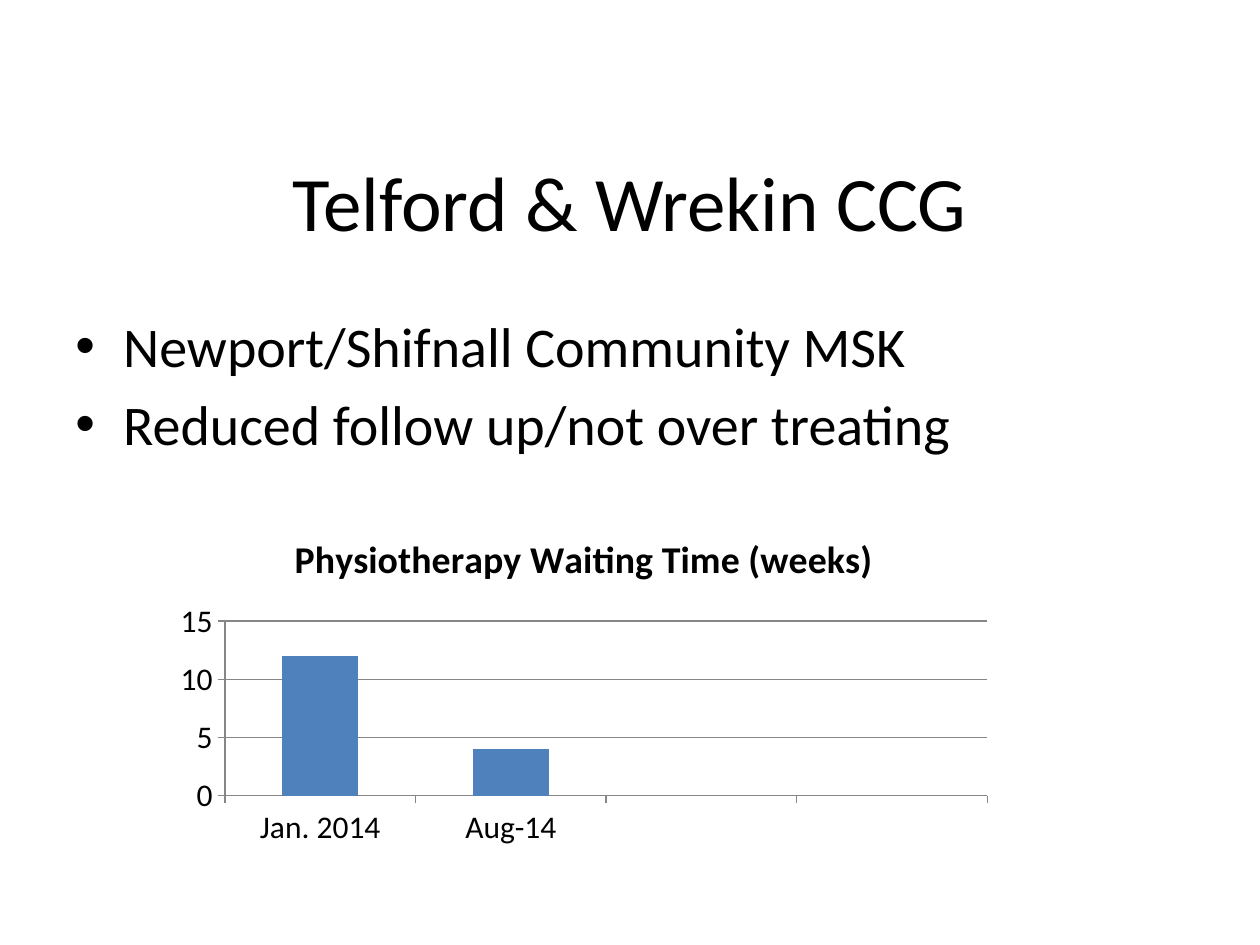
from dataclasses import dataclass

from lxml.etree import SubElement
from pptx import Presentation
from pptx.chart.data import CategoryChartData
from pptx.dml.color import RGBColor
from pptx.enum.chart import XL_CHART_TYPE as ChartType, XL_TICK_MARK as TickMark
from pptx.enum.text import MSO_ANCHOR as Anchor, PP_ALIGN as Align
from pptx.oxml.ns import qn
from pptx.util import Inches, Pt


@dataclass(frozen=True)
class Theme:
    font: str = "Calibri"
    ink: RGBColor = RGBColor(0x00, 0x00, 0x00)
    bar: RGBColor = RGBColor(0x4F, 0x81, 0xBD)
    grid: RGBColor = RGBColor(0x86, 0x86, 0x86)
    title_size: float = 44
    body_size: float = 32
    chart_title_size: float = 21.6
    chart_size: float = 18


theme = Theme()


def style_font(font, size, bold=False):
    font.name = theme.font
    font.size = Pt(size)
    font.bold = bold
    font.color.rgb = theme.ink


deck = Presentation()
deck.slide_width = Inches(10)
deck.slide_height = Inches(7.5)
page = deck.slides.add_slide(deck.slide_layouts[5])

# Title
title = page.shapes.title
title.left, title.top = Inches(0.5), Inches(0.97)
title.width, title.height = Inches(9), Inches(1.25)
title.text_frame.vertical_anchor = Anchor.MIDDLE
para = title.text_frame.paragraphs[0]
para.alignment = Align.CENTER
span = para.add_run()
span.text = "Telford & Wrekin CCG"
style_font(span.font, theme.title_size)

# Bullets
body = page.shapes.add_textbox(Inches(0.5), Inches(2.42), Inches(9), Inches(4.8))
frame = body.text_frame
frame.word_wrap = True
points = ["Newport/Shifnall Community MSK", "Reduced follow up/not over treating"]
for index, point in enumerate(points):
    para = frame.add_paragraph() if index else frame.paragraphs[0]
    properties = para._p.get_or_add_pPr()
    properties.set("marL", str(Inches(0.38)))
    properties.set("indent", str(-Inches(0.38)))
    SubElement(properties, qn("a:buFont")).set("typeface", "Arial")
    SubElement(properties, qn("a:buChar")).set("char", "•")
    para.space_before = Pt(0.2 * theme.body_size if index else 0)
    span = para.add_run()
    span.text = point
    style_font(span.font, theme.body_size)

# Waiting time chart; the last two categories are empty
waiting = CategoryChartData()
waiting.categories = ["Jan. 2014", "Aug-14", "", ""]
waiting.add_series("Series 1", [12, 4, None, None])
chart = page.shapes.add_chart(
    ChartType.COLUMN_CLUSTERED,
    Inches(1.3), Inches(4.06), Inches(6.67), Inches(2.71), waiting,
).chart
style_font(chart.font, theme.chart_size)
chart.has_legend = False
chart.has_title = True
chart.chart_title.include_in_layout = False
span = chart.chart_title.text_frame.paragraphs[0].add_run()
span.text = "Physiotherapy Waiting Time (weeks)"
style_font(span.font, theme.chart_title_size, bold=True)

plot = chart.plots[0]
plot.vary_by_categories = False
plot.gap_width = 150
bars = plot.series[0].format.fill
bars.solid()
bars.fore_color.rgb = theme.bar

weeks = chart.value_axis
weeks.minimum_scale, weeks.maximum_scale, weeks.major_unit = 0, 15, 5
weeks.has_major_gridlines = True
for axis in (chart.category_axis, weeks):
    axis.major_tick_mark = TickMark.OUTSIDE
    axis.minor_tick_mark = TickMark.NONE
for line in (chart.category_axis.format.line, weeks.format.line,
             weeks.major_gridlines.format.line):
    line.color.rgb = theme.grid
    line.width = Pt(0.75)

deck.save("out.pptx")
